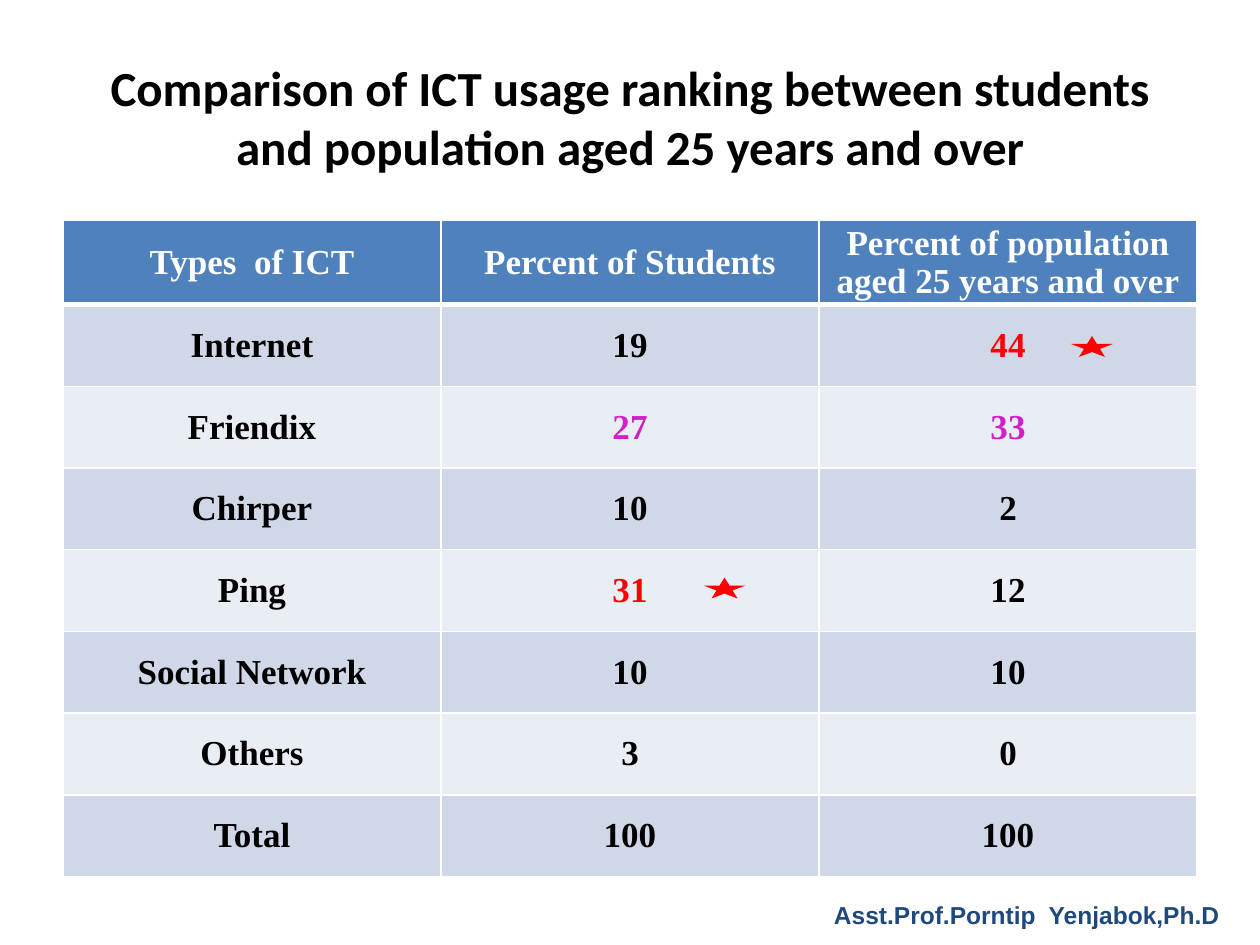
from lxml import etree
from pptx import Presentation
from pptx.dml.color import RGBColor
from pptx.enum.shapes import MSO_SHAPE
from pptx.enum.text import MSO_ANCHOR, MSO_AUTO_SIZE, PP_ALIGN
from pptx.oxml.ns import qn
from pptx.util import Inches, Pt

STAR = MSO_SHAPE.STAR_5_POINT
MIDDLE, TOP = MSO_ANCHOR.MIDDLE, MSO_ANCHOR.TOP
CENTER, RIGHT = PP_ALIGN.CENTER, PP_ALIGN.RIGHT
GROW = MSO_AUTO_SIZE.SHAPE_TO_FIT_TEXT

BLACK = RGBColor(0x00, 0x00, 0x00)
WHITE = RGBColor(0xFF, 0xFF, 0xFF)
BLUE = RGBColor(0x4F, 0x81, 0xBD)
NAVY = RGBColor(0x1F, 0x49, 0x7D)
DARK = RGBColor(0xD0, 0xD8, 0xE8)
LIGHT = RGBColor(0xE9, 0xED, 0xF4)
RED = RGBColor(0xFF, 0x00, 0x00)
PINK = RGBColor(0xD1, 0x1F, 0xC9)

COLS, ROWS = 120, 90
UNIT = Inches(10) / COLS

ROWS_DATA = [
    ("Types  of ICT", "Percent of Students",
     "Percent of population aged 25 years and over"),
    ("Internet", "19", "44"),
    ("Friendix", "27", "33"),
    ("Chirper", "10", "2"),
    ("Ping", "31", "12"),
    ("Social Network", "10", "10"),
    ("Others", "3", "0"),
    ("Total", "100", "100"),
]
MARKS = {(1, 2): RED, (4, 1): RED, (2, 1): PINK, (2, 2): PINK}


def grid(*cells):
    return [round(n * UNIT) for n in cells]


def style(font, size, name, color):
    font.color.rgb = color
    for key, value in dict(size=Pt(size), name=name, bold=True).items():
        setattr(font, key, value)


def write(para, text, align, *look):
    para.alignment = align
    run = para.add_run()
    run.text = text
    style(run.font, *look)


def add_text(slide, box, text, align, look, **frame):
    body = slide.shapes.add_textbox(*box).text_frame
    for key, value in frame.items():
        setattr(body, key, value)
    write(body.paragraphs[0], text, align, *look)


def add_edges(cell, row):
    props = cell._tc.get_or_add_tcPr()
    thick = {"T": row == 1, "B": row == 0}
    for side in "LRTB":
        width = Pt(3 if thick.get(side) else 1)
        line = etree.SubElement(props, qn(f"a:ln{side}"), w=str(width))
        fill = etree.SubElement(line, qn("a:solidFill"))
        etree.SubElement(fill, qn("a:srgbClr"), val=str(WHITE))


def fill_cell(cell, row, col, text):
    frame = dict(margin_left=Inches(0.07), margin_right=Inches(0.07),
                 margin_top=0, margin_bottom=0, vertical_anchor=MIDDLE)
    for key, value in frame.items():
        setattr(cell, key, value)
    add_edges(cell, row)
    cell.fill.solid()
    cell.fill.fore_color.rgb = BLUE if row == 0 else DARK if row % 2 else LIGHT
    color = MARKS.get((row, col), BLACK if row else WHITE)
    write(cell.text_frame.paragraphs[0], text, CENTER,
          20, "Times New Roman", color)


def add_ranks(slide, box):
    table = slide.shapes.add_table(len(ROWS_DATA), 3, *box).table
    table.first_row = table.horz_banding = False
    for row, texts in enumerate(ROWS_DATA):
        for col, text in enumerate(texts):
            fill_cell(table.cell(row, col), row, col, text)


def add_star(slide, box):
    star = slide.shapes.add_shape(STAR, *box)
    star.shadow.inherit = False
    star.fill.solid()
    star.fill.fore_color.rgb = RED
    star.line.fill.background()


def main():
    deck = Presentation()
    deck.slide_width, deck.slide_height = grid(COLS, ROWS)
    slide = deck.slides.add_slide(deck.slide_layouts[6])
    add_text(slide, grid(6, 3.6, 108, 15),
             "Comparison of ICT usage ranking between students "
             "and population aged 25 years and over",
             CENTER, (28, "Calibri", BLACK),
             word_wrap=True, vertical_anchor=MIDDLE)
    add_ranks(slide, grid(6, 21, 108, 62.28))
    add_text(slide, grid(78, 85.08, 39.36, 6.84),
             "Asst.Prof.Porntip  Yenjabok,Ph.D",
             RIGHT, (14, "Arial", NAVY),
             word_wrap=False, vertical_anchor=TOP, auto_size=GROW)
    for left, top in ((67, 55), (102, 32)):
        add_star(slide, grid(left, top, 4, 2))
    deck.save("out.pptx")


if __name__ == "__main__":
    main()
